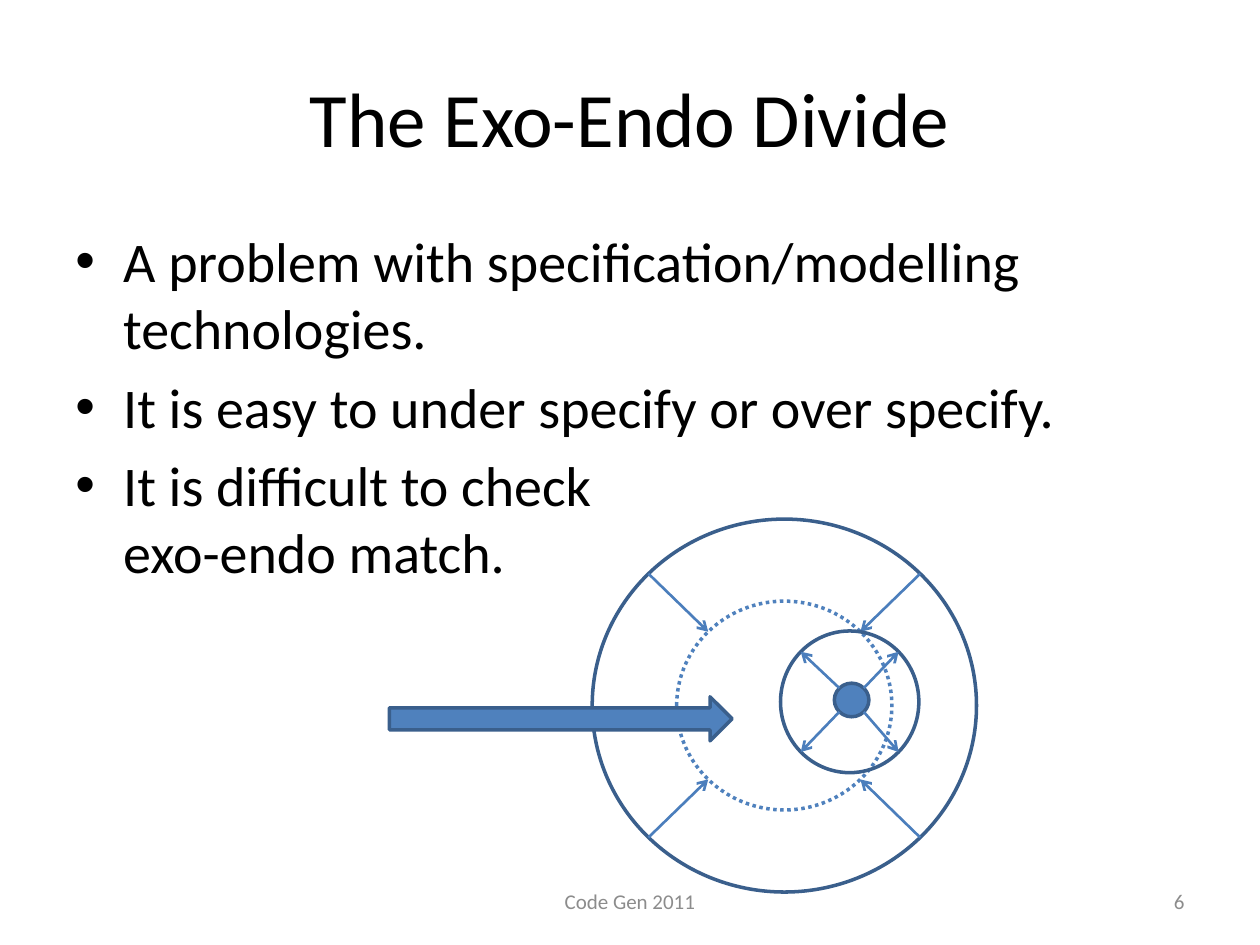
from dataclasses import dataclass
from itertools import product
from math import sqrt

from lxml.etree import SubElement
from pptx import Presentation
from pptx.dml.color import RGBColor
from pptx.enum.dml import MSO_LINE
from pptx.enum.shapes import MSO_CONNECTOR, MSO_SHAPE
from pptx.enum.text import MSO_ANCHOR as Anchor, PP_ALIGN as Align
from pptx.oxml.ns import qn
from pptx.util import Emu, Inches, Pt

COLUMNS, ROWS = 100, 75
CELL = Inches(0.1)


@dataclass(frozen=True)
class Theme:
    font: str = "Calibri"
    ink: RGBColor = RGBColor(0x00, 0x00, 0x00)
    muted: RGBColor = RGBColor(0x8C, 0x8C, 0x8C)
    accent: RGBColor = RGBColor(0x4F, 0x81, 0xBD)
    outline: RGBColor = RGBColor(0x3A, 0x5F, 0x8C)
    arrow: RGBColor = RGBColor(0x4B, 0x7E, 0xBC)
    title_size: Pt = Pt(44)
    body_size: Pt = Pt(32)
    footer_size: Pt = Pt(12)
    outline_width: Pt = Pt(2)
    arrow_width: Pt = Pt(1.5)


THEME = Theme()


@dataclass(frozen=True)
class Box:
    """A rectangle in grid columns and rows."""
    left: float
    top: float
    width: float
    height: float

    def inner(self, left, top, width, height):
        """Box given as shares of this one."""
        return Box(self.left + left * self.width, self.top + top * self.height,
                   width * self.width, height * self.height)

    def diagonal_point(self, across, down):
        """Point at 45 degrees on the inscribed ellipse; signs choose the quadrant."""
        return (self.left + self.width / 2 * (1 + across / sqrt(2)),
                self.top + self.height / 2 * (1 + down / sqrt(2)))

    def lengths(self):
        return to_lengths(self.left, self.top, self.width, self.height)


def to_lengths(*cells):
    return [Emu(round(cell * CELL)) for cell in cells]


def add_text(slide, box, lines, size, color, align=Align.LEFT, anchor=Anchor.MIDDLE):
    frame = slide.shapes.add_textbox(*box.lengths()).text_frame
    frame.word_wrap = True
    frame.vertical_anchor = anchor
    frame.text = "\n".join(lines)
    for paragraph in frame.paragraphs:
        paragraph.alignment = align
        paragraph.font.name = THEME.font
        paragraph.font.size = size
        paragraph.font.color.rgb = color
    return frame


def add_bullets(slide, box, points):
    frame = add_text(slide, box, points, THEME.body_size, THEME.ink, anchor=Anchor.TOP)
    indent = Inches(0.38)
    for paragraph in frame.paragraphs:
        paragraph.space_before = Pt(6.4)
        properties = paragraph._p.get_or_add_pPr()
        properties.set("marL", str(indent))
        properties.set("indent", str(-indent))
        bullet_font = SubElement(properties, qn("a:buFont"))
        bullet_font.set("typeface", "Arial")
        SubElement(properties, qn("a:buChar")).set("char", "•")
        # The schema wants default run properties after the bullet.
        properties.append(properties.find(qn("a:defRPr")))


def add_outlined(slide, kind, box, line_color=THEME.outline, fill=None, dash=None):
    shape = slide.shapes.add_shape(kind, *box.lengths())
    shape.shadow.inherit = False
    if fill is None:
        shape.fill.background()
    else:
        shape.fill.solid()
        shape.fill.fore_color.rgb = fill
    shape.line.color.rgb = line_color
    shape.line.width = THEME.outline_width
    if dash is not None:
        shape.line.dash_style = dash


def add_diagonal_arrows(slide, source, target):
    """Four arrows from one ellipse to another, one in each quadrant."""
    for quadrant in product((1, -1), repeat=2):
        ends = source.diagonal_point(*quadrant) + target.diagonal_point(*quadrant)
        arrow = slide.shapes.add_connector(MSO_CONNECTOR.STRAIGHT, *to_lengths(*ends))
        arrow.line.color.rgb = THEME.arrow
        arrow.line.width = THEME.arrow_width
        SubElement(arrow.line._get_or_add_ln(), qn("a:tailEnd")).set("type", "arrow")
        SubElement(arrow._element.spPr, qn("a:effectLst"))


def add_exo_endo_diagram(slide, exo):
    exo_limit = exo.inner(0.22, 0.22, 0.56, 0.56)
    endo = exo.inner(0.49, 0.3, 0.36, 0.38)
    core = exo.inner(0.63, 0.44, 0.09, 0.09)

    add_outlined(slide, MSO_SHAPE.OVAL, exo)
    add_diagonal_arrows(slide, exo, exo_limit)
    add_outlined(slide, MSO_SHAPE.OVAL, exo_limit, THEME.accent, dash=MSO_LINE.ROUND_DOT)
    add_outlined(slide, MSO_SHAPE.OVAL, core, fill=THEME.accent)
    add_outlined(slide, MSO_SHAPE.OVAL, endo)
    add_diagonal_arrows(slide, core, endo)


def add_footer(slide, box, event, number):
    for share, text, align in (((0.32, 0, 0.36, 1), event, Align.CENTER),
                               ((0.74, 0, 0.26, 1), number, Align.RIGHT)):
        add_text(slide, box.inner(*share), [text], THEME.footer_size, THEME.muted, align)


def main():
    deck = Presentation()
    deck.slide_width, deck.slide_height = to_lengths(COLUMNS, ROWS)
    slide = deck.slides.add_slide(deck.slide_layouts[6])

    add_text(slide, Box(5, 3, 90, 12.5), ["The Exo-Endo Divide"],
             THEME.title_size, THEME.ink, Align.CENTER)
    add_bullets(slide, Box(5, 17.5, 90, 49.5), [
        "A problem with specification/modelling technologies.",
        "It is easy to under specify or over specify.",
        "It is difficult to check \vexo-endo match.",
    ])
    add_exo_endo_diagram(slide, Box(47, 41.2, 30.5, 29.6))
    add_outlined(slide, MSO_SHAPE.RIGHT_ARROW, Box(30.9, 55.3, 27.2, 3.5), fill=THEME.accent)
    add_footer(slide, Box(5, 69.5, 90, 4), "Code Gen 2011", "6")
    deck.save("out.pptx")


if __name__ == "__main__":
    main()
